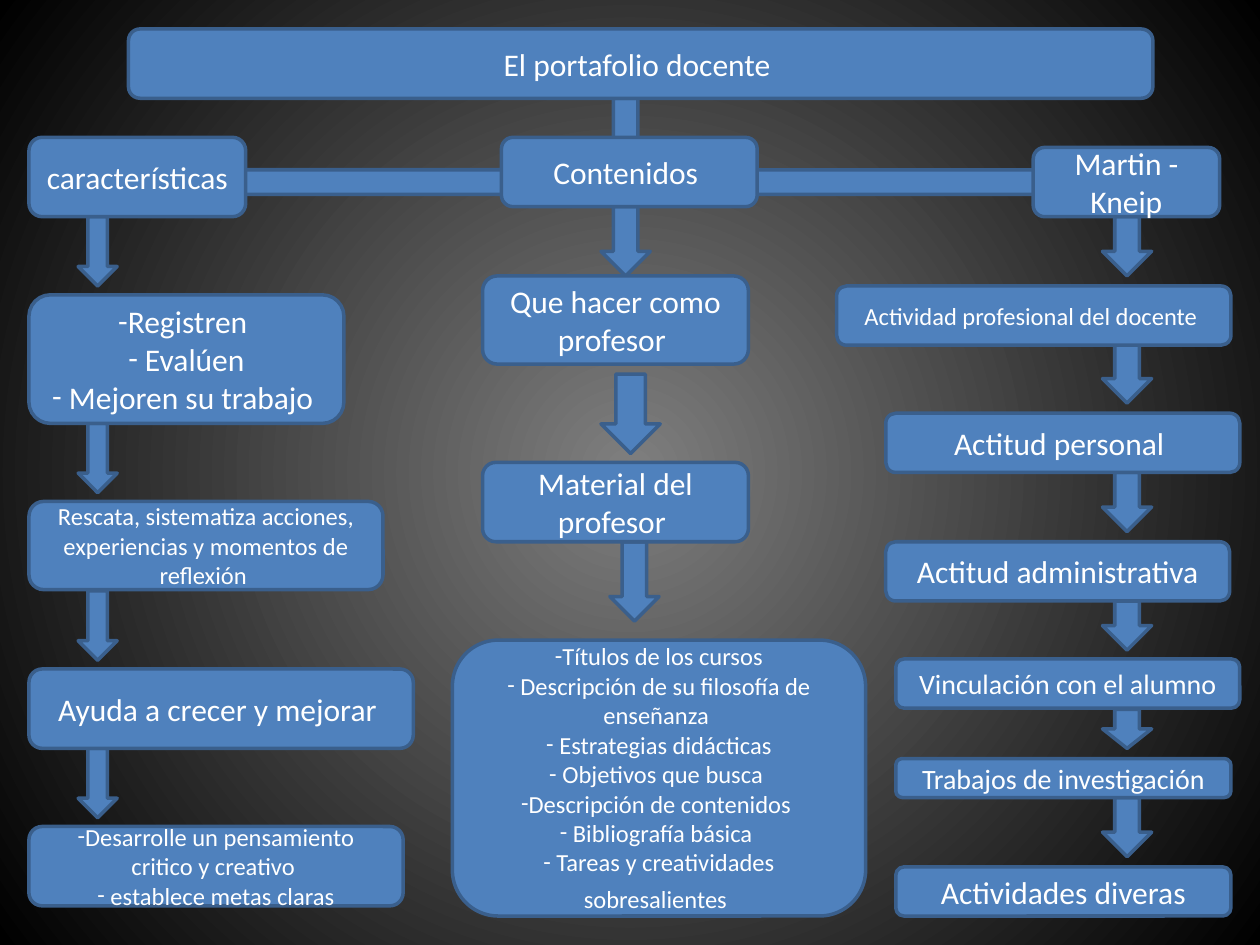
from lxml import etree
from pptx import Presentation
from pptx.dml.color import RGBColor
from pptx.enum.shapes import MSO_SHAPE as Shape
from pptx.enum.text import MSO_ANCHOR as Anchor, PP_ALIGN as Align
from pptx.oxml.ns import qn
from pptx.util import Inches, Pt

FILL, EDGE, WHITE = "4F81BD", "3A5F8C", "FFFFFF"
FONT = "Calibri"

# left, top, width, height, text size, text
BOXES = [
    (1.02, 0.23, 8.13, 0.55, 18, "El portafolio docente "),
    (3.98, 1.09, 2.03, 0.55, 18, "Contenidos "),
    (3.83, 2.19, 2.11, 0.7, 18, "Que hacer como profesor "),
    (3.83, 3.67, 2.11, 0.63, 18, "Material del profesor "),
    (0.23, 1.09, 1.72, 0.63, 18, "características"),
    (0.23, 3.98, 2.81, 0.7, 14,
     "Rescata, sistematiza acciones, experiencias y momentos de reflexión "),
    (0.23, 5.31, 3.05, 0.63, 18, "Ayuda a crecer y mejorar "),
    (8.2, 1.17, 1.48, 0.55, 18, "Martin - Kneip"),
    (6.64, 2.27, 3.13, 0.47, 14, "Actividad profesional del docente "),
    (7.03, 3.28, 2.81, 0.47, 18, "Actitud personal "),
    (7.03, 4.3, 2.73, 0.47, 18, "Actitud administrativa"),
    (7.11, 5.23, 2.73, 0.39, 16, "Vinculación con el alumno"),
    (7.11, 6.02, 2.66, 0.31, 16, "Trabajos de investigación"),
    (7.11, 6.88, 2.66, 0.39, 18, "Actividades diveras"),
]
LISTS = [
    (0.23, 2.34, 2.5, 1.02, 18,
     ["Registren ", " Evalúen", " Mejoren su trabajo "]),
    (0.23, 6.56, 2.97, 0.63, 14,
     ["Desarrolle un pensamiento critico y creativo ",
      " establece metas claras"]),
]
TOPICS = (3.59, 5.08, 3.28, 2.19, 14, [
    "Títulos de los cursos",
    " Descripción de su filosofía de enseñanza ",
    " Estrategias didácticas",
    " Objetivos que busca ",
    "Descripción de contenidos ",
    " Bibliografía básica ",
    " Tareas y creatividades sobresalientes",
])
# left, width, then (top, height) of each arrow in the column
ARROWS = [
    (4.77, 0.39, [(0.78, 0.78), (1.64, 0.55)]),
    (4.77, 0.47, [(2.97, 0.63)]),
    (4.84, 0.39, [(4.3, 0.63)]),
    (0.62, 0.31, [(top, 0.55) for top in (1.72, 3.36, 4.69, 5.94)]),
    (8.75, 0.39, [(1.72, 0.47), (2.73, 0.47), (3.75, 0.47),
                  (4.77, 0.39), (5.63, 0.31), (6.33, 0.47)]),
]


def color(code):
    return RGBColor.from_string(code)


def set_back(slide):
    """Fill the background with a round gradient from the centre."""
    fill = slide.background.fill
    fill.gradient()
    for stop, code, pos in zip(fill.gradient_stops, ("7F7F7F", "000000"), (0, 1)):
        stop.color.rgb = color(code)
        stop.position = pos
    lin = slide.element.find(".//" + qn("a:lin"))
    ring = etree.Element(qn("a:path"), path="circle")
    etree.SubElement(ring, qn("a:fillToRect"),
                     {side: "50000" for side in "ltrb"})
    lin.getparent().replace(lin, ring)


def add_form(slide, kind, *at):
    form = slide.shapes.add_shape(kind, *map(Inches, at))
    form.shadow.inherit = False
    form.fill.solid()
    form.fill.fore_color.rgb = color(FILL)
    form.line.color.rgb = color(EDGE)
    form.line.width = Pt(2)
    return form


def add_run(para, text, size):
    run = para.add_run()
    run.text = text
    run.font.size = Pt(size)
    run.font.name = FONT
    run.font.color.rgb = color(WHITE)


def add_dash(para):
    """Put a dash bullet without hanging indent, so lines stay centred."""
    props = para._p.get_or_add_pPr()
    props.set("marL", "0")
    props.set("indent", "0")
    etree.SubElement(props, qn("a:buFont"), typeface=FONT)
    etree.SubElement(props, qn("a:buChar"), char="-")


def add_box(slide, left, top, width, height, size, items, dash=False):
    form = add_form(slide, Shape.ROUNDED_RECTANGLE, left, top, width, height)
    frame = form.text_frame
    frame.word_wrap = True
    frame.vertical_anchor = Anchor.MIDDLE
    for i, text in enumerate(items):
        para = frame.add_paragraph() if i else frame.paragraphs[0]
        para.alignment = Align.CENTER
        if dash:
            add_dash(para)
        add_run(para, text, size)
    return frame


def main():
    deck = Presentation()
    deck.slide_width, deck.slide_height = Inches(10), Inches(7.5)
    slide = deck.slides.add_slide(deck.slide_layouts[6])
    set_back(slide)

    for left, turn in ((0.7, 0), (4.92, 180)):
        bar = add_form(slide, Shape.LEFT_ARROW, left, 1.25, 4.38, 0.39)
        bar.rotation = turn
    for left, width, spans in ARROWS:
        for top, height in spans:
            add_form(slide, Shape.DOWN_ARROW, left, top, width, height)

    for *spot, text in BOXES:
        add_box(slide, *spot, [text])
    for row in LISTS:
        add_box(slide, *row, dash=True)
    topics = add_box(slide, *TOPICS, dash=True)
    add_run(topics.paragraphs[-1], " ", 18)

    deck.save("out.pptx")


if __name__ == "__main__":
    main()
